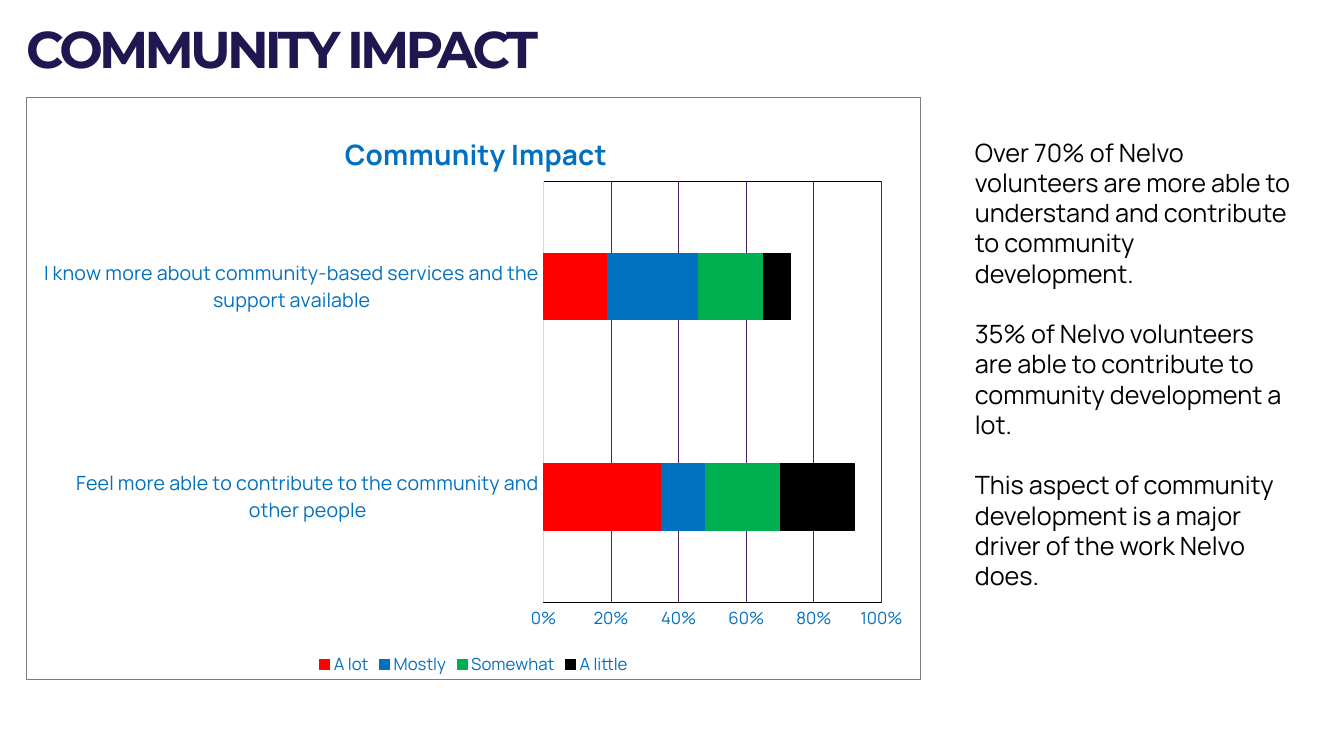
from dataclasses import dataclass

from lxml import etree
from pptx import Presentation
from pptx.chart.data import CategoryChartData
from pptx.dml.color import RGBColor
from pptx.enum.chart import XL_CHART_TYPE, XL_LEGEND_POSITION, XL_TICK_MARK
from pptx.enum.text import MSO_ANCHOR, PP_ALIGN
from pptx.oxml import parse_xml
from pptx.oxml.ns import nsdecls, qn
from pptx.util import Inches, Pt

STACKED_BARS = XL_CHART_TYPE.BAR_STACKED
LEGEND_BOTTOM = XL_LEGEND_POSITION.BOTTOM
NO_TICK = XL_TICK_MARK.NONE
TOP = MSO_ANCHOR.TOP
LEFT = PP_ALIGN.LEFT

NAVY = RGBColor(0x20, 0x17, 0x51)
PURPLE = RGBColor(0x47, 0x23, 0x64)
RED = RGBColor(0xFF, 0x00, 0x00)
BLUE = RGBColor(0x00, 0x70, 0xC0)
GREEN = RGBColor(0x00, 0xB0, 0x50)
BLACK = RGBColor(0x00, 0x00, 0x00)
LIGHT_GREY = RGBColor(0xD9, 0xD9, 0xD9)
GREY = RGBColor(0x7C, 0x7C, 0x7C)
HAIRLINE = Pt(0.75)
HEADING_FONT = "Montserrat"
BODY_FONT = "Manrope"


@dataclass(frozen=True)
class Answer:
    name: str
    shares: tuple[float, ...]
    color: RGBColor


STATEMENTS = (
    "Feel more able to contribute to the community and other people",
    "I know more about community-based services and the support available",
)
ANSWERS = (
    Answer("A lot", (0.35, 0.19), RED),
    Answer("Mostly", (0.13, 0.27), BLUE),
    Answer("Somewhat", (0.22, 0.19), GREEN),
    Answer("A little", (0.22, 0.08), BLACK),
)
FINDINGS = (
    "Over 70% of Nelvo volunteers are more able to understand and contribute "
    "to community development.",
    "35% of Nelvo volunteers are able to contribute to community development a lot.",
    "This aspect of community development is a major driver of the work Nelvo does.",
)


def format_font(font, size: float, color: RGBColor, name: str = BODY_FONT,
                bold: bool = False) -> None:
    font.size, font.name, font.bold = Pt(size), name, bold
    font.color.rgb = color


def write_text(frame, paragraphs, *, size: float, color: RGBColor,
               name: str = BODY_FONT, bold: bool = False, gap: float = 0,
               line_height: float | None = None, tracking: float = 0) -> None:
    frame.word_wrap = True
    for index, text in enumerate(paragraphs):
        paragraph = frame.add_paragraph() if index else frame.paragraphs[0]
        paragraph.alignment = LEFT
        if index:
            paragraph.space_before = Pt(gap)
        if line_height:
            paragraph.line_spacing = Pt(line_height)
        run = paragraph.add_run()
        run.text = text
        format_font(run.font, size, color, name, bold)
        if tracking:
            run.font._element.set("spc", str(round(tracking * 100)))


def outline(line, color: RGBColor) -> None:
    line.color.rgb = color
    line.width = HAIRLINE


def border_xml(color: RGBColor):
    return parse_xml(
        f'<c:spPr {nsdecls("c", "a")}><a:noFill/><a:ln w="{HAIRLINE}">'
        f'<a:solidFill><a:srgbClr val="{color}"/></a:solidFill></a:ln></c:spPr>')


def place(element, after, inner: bool = False, **fractions: float) -> None:
    """Set a chart part's position as fractions of the chart."""
    for old in element.findall(qn("c:layout")):
        element.remove(old)
    layout = etree.Element(qn("c:layout"))
    manual = etree.SubElement(layout, qn("c:manualLayout"))
    settings = {"layoutTarget": "inner"} if inner else {}
    settings |= {"xMode": "edge", "yMode": "edge", **fractions}
    for tag, value in settings.items():
        etree.SubElement(manual, qn(f"c:{tag}")).set("val", str(value))
    if after is None:
        element.insert(0, layout)
    else:
        after.addnext(layout)


def add_impact_chart(slide) -> None:
    data = CategoryChartData(number_format="0%")
    data.categories = STATEMENTS
    for answer in ANSWERS:
        data.add_series(answer.name, answer.shares)
    chart = slide.shapes.add_chart(
        STACKED_BARS, Inches(0.26), Inches(0.96), Inches(8.88), Inches(5.79),
        data).chart
    format_font(chart.font, 12, BLUE)

    chart.has_title = True
    heading = chart.chart_title.text_frame.paragraphs[0].add_run()
    heading.text = "Community Impact"
    format_font(heading.font, 20, BLUE, bold=True)

    chart.has_legend = True
    chart.legend.position = LEGEND_BOTTOM
    chart.legend.include_in_layout = False
    format_font(chart.legend.font, 12, BLUE)

    bars = chart.plots[0]
    bars.gap_width, bars.overlap = 219, 100
    bars.vary_by_categories = False
    for series, answer in zip(bars.series, ANSWERS):
        series.format.fill.solid()
        series.format.fill.fore_color.rgb = answer.color
        outline(series.format.line, answer.color)

    statements, shares = chart.category_axis, chart.value_axis
    for axis, size in ((statements, 14), (shares, 12)):
        axis.major_tick_mark = axis.minor_tick_mark = NO_TICK
        format_font(axis.tick_labels.font, size, BLUE)
    outline(statements.format.line, LIGHT_GREY)
    shares.format.line.fill.background()
    shares.minimum_scale, shares.maximum_scale, shares.major_unit = 0, 1, 0.2
    shares.tick_labels.number_format = "0%"
    shares.tick_labels.number_format_is_linked = False
    outline(shares.major_gridlines.format.line, PURPLE)

    chart_space = chart._chartSpace
    chart_space.find(qn("c:chart")).addnext(border_xml(GREY))
    plot_area = chart_space.chart.plotArea
    plot_area.append(border_xml(BLACK))
    place(plot_area, None, inner=True, x=0.578, y=0.144, w=0.378, h=0.723)
    title = chart.chart_title._element
    place(title, title.find(qn("c:tx")), x=0.35, y=0.05)


def add_title(slide) -> None:
    title = slide.shapes.title
    title.left, title.top = Inches(0.26), Inches(0.33)
    title.width, title.height = Inches(9.12), Inches(0.99)
    frame = title.text_frame
    frame.margin_left = frame.margin_top = frame.margin_right = frame.margin_bottom = 0
    frame.vertical_anchor = TOP
    write_text(frame, ["COMMUNITY IMPACT"], size=36.9, color=NAVY,
               name=HEADING_FONT, bold=True, line_height=32.3, tracking=-2.8)


def add_findings(slide) -> None:
    findings = slide.shapes.add_textbox(
        Inches(9.57), Inches(1.31), Inches(3.38), Inches(4.64))
    write_text(findings.text_frame, FINDINGS, size=18, color=BLACK, gap=21.6)


def main() -> None:
    deck = Presentation()
    deck.slide_width, deck.slide_height = Inches(13.33), Inches(7.5)
    slide = deck.slides.add_slide(deck.slide_layouts[5])
    add_title(slide)
    add_impact_chart(slide)
    add_findings(slide)
    deck.save("out.pptx")


if __name__ == "__main__":
    main()
